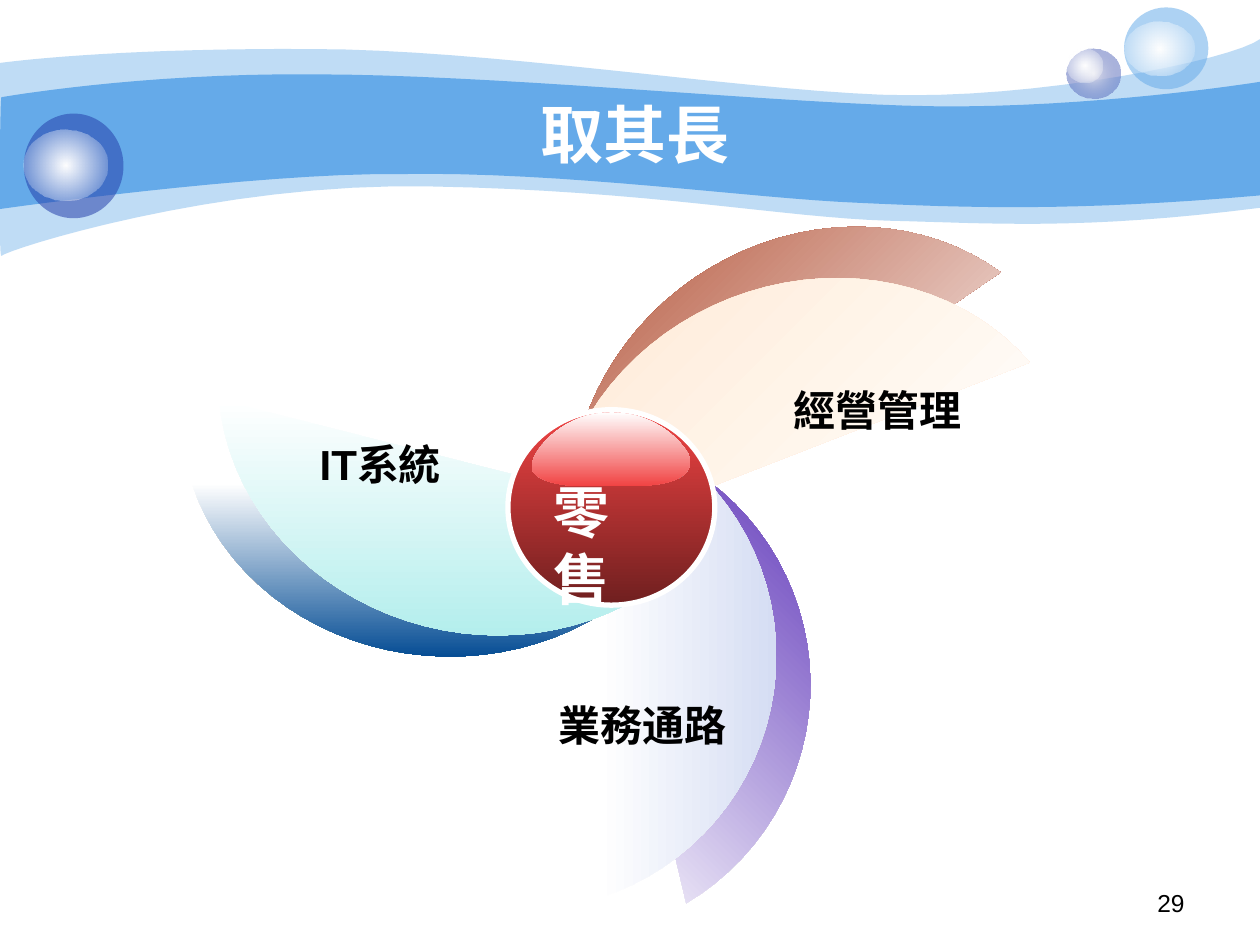
import math

import pptx
import pptx.dml.color
import pptx.enum.shapes
import pptx.enum.text
import pptx.oxml
import pptx.oxml.ns
import pptx.util

Cm = pptx.util.Cm
ALIGN = pptx.enum.text.PP_ALIGN
OVAL = pptx.enum.shapes.MSO_SHAPE.OVAL
CJK = "Noto Sans CJK SC"
COLORS = {
    "white": "FFFFFF", "black": "000000", "sky": "65AAE9", "navy": "233DA9",
    "mist": "E1E2ED", "brown": "A43010", "peach": "FFE6CD", "purple": "4516AE",
    "blue": "004992", "lavender": "D5DDF3", "aqua": "A2EAE8",
    "red": "F14343", "dark red": "6F1F1F",
}


def paint(shape, stops, angle=None):
    """Fill with (colour, opacity) stops: one is solid, no angle is radial."""
    colors = [
        f'<a:srgbClr val="{COLORS[name]}"><a:alpha val="{opacity * 1000}"/></a:srgbClr>'
        for name, opacity in stops
    ]
    namespace = pptx.oxml.ns.nsdecls("a")
    if len(colors) == 1:
        xml = f"<a:solidFill {namespace}>{colors[0]}</a:solidFill>"
    else:
        if angle is None:
            way = ('<a:path path="circle"><a:fillToRect l="50000" t="50000" '
                   'r="50000" b="50000"/></a:path>')
        else:
            way = f'<a:lin ang="{angle * 60000}" scaled="0"/>'
        xml = (f'<a:gradFill {namespace} rotWithShape="0"><a:gsLst>'
               f'<a:gs pos="0">{colors[0]}</a:gs><a:gs pos="100000">{colors[1]}</a:gs>'
               f"</a:gsLst>{way}</a:gradFill>")
    shape.shadow.inherit = False
    shape.line.fill.background()
    shape.fill.background()
    properties = shape._element.spPr
    empty_fill = properties.find(pptx.oxml.ns.qn("a:noFill"))
    properties.replace(empty_fill, pptx.oxml.parse_xml(xml))


def style(para, size, color, bold, align, latin=CJK):
    para.alignment = align
    para.font.size = pptx.util.Pt(size)
    para.font.bold = bold
    para.font.color.rgb = pptx.dml.color.RGBColor.from_string(COLORS[color])
    para.font.name = latin
    defaults = para._p.pPr.find(pptx.oxml.ns.qn("a:defRPr"))
    east_asian = pptx.oxml.parse_xml(
        f'<a:ea {pptx.oxml.ns.nsdecls("a")} typeface="{CJK}"/>')
    defaults.find(pptx.oxml.ns.qn("a:latin")).addnext(east_asian)


deck = pptx.Presentation()
deck.slide_width, deck.slide_height = Cm(25.4), Cm(19.05)
page = deck.slides.add_slide(deck.slide_layouts[5])
shapes = page.shapes

# Curved outlines in cm: a start point, then curves (6 numbers) or lines (2)
outer_wave = [
    (0, 1.27), (0.61, 1.19, 2.72, 0.97, 6.27, 0.99),
    (9.8, 0.99, 14.61, 1.78, 17.75, 1.91), (20.88, 2.03, 24.89, 1.19, 25.4, 0.79),
    (25.4, 4.19), (21.79, 4.65, 19.99, 4.5, 17.91, 4.45),
    (15.8, 4.39, 13.08, 3.84, 8.71, 3.76), (4.37, 3.66, 0.1, 5.05, 0.03, 5.16),
    (-0.03, 5.28, 0, 1.91, 0, 1.27),
]
inner_wave = [
    (0.03, 1.96), (0.05, 1.96, 2.79, 1.47, 6.3, 1.5),
    (9.8, 1.5, 15.11, 2.03, 18.24, 2.13), (21.36, 2.24, 24.79, 1.75, 25.4, 1.65),
    (25.4, 3.94), (21.67, 4.27, 19.43, 4.19, 17.32, 4.09),
    (15.21, 4.01, 11.35, 3.45, 8.05, 3.51), (5.16, 3.48, -0.05, 4.22, -0.03, 4.22),
    (0, 4.22, 0, 1.96, 0.03, 1.96),
]
gloss = [
    (13.87, 9.14), (14.05, 9.58, 13.61, 9.8, 12.7, 9.8), (11.76, 9.8),
    (11.15, 9.8, 10.67, 9.63, 10.72, 9.37), (10.77, 9.02, 11.4, 8.31, 12.32, 8.31),
    (12.95, 8.31, 13.56, 8.64, 13.87, 9.14),
]
curved = []
STEPS = 16
for outline, stops, angle in [
    (outer_wave, [("sky", 41)], None),
    (inner_wave, [("sky", 100)], None),
    (gloss, [("white", 100), ("red", 100)], 90),
]:
    points = [outline[0]]
    for segment in outline[1:]:
        if len(segment) == 2:
            points.append(segment)
            continue
        x0, y0 = points[-1]
        x1, y1, x2, y2, x3, y3 = segment
        for step in range(1, STEPS + 1):
            t = step / STEPS
            a, b, c, d = (1 - t) ** 3, 3 * t * (1 - t) ** 2, 3 * t * t * (1 - t), t ** 3
            points.append((a * x0 + b * x1 + c * x2 + d * x3,
                           a * y0 + b * y1 + c * y2 + d * y3))
    points = [(Cm(x), Cm(y)) for x, y in points]
    builder = shapes.build_freeform(*points[0])
    builder.add_line_segments(points[1:], close=True)
    curved.append(builder.convert_to_shape())
    paint(curved[-1], stops, angle)

# Glass bubbles, each with a highlight
glow = [("white", 100), ("white", 0)]
for box, stops in [
    ((21.51, 0.97, 1.07, 1.02), [("mist", 100), ("navy", 31)]),
    ((21.51, 0.97, 0.71, 0.69), glow),
    ((22.66, 0.15, 1.7, 1.65), [("sky", 53)]),
    ((22.66, 0.43, 1.42, 1.09), glow),
    ((0.48, 2.29, 2.01, 2.11), [("navy", 53)]),
    ((0.48, 2.62, 1.68, 1.42), glow),
]:
    paint(shapes.add_shape(OVAL, *map(Cm, box)), stops)

# Title, above the waves
title = shapes.title
shapes._spTree.append(title._element)
title.left, title.top, title.width, title.height = map(Cm, (2.54, 1.91, 20.52, 1.57))
title.text_frame.text = "取其長"
title.text_frame.vertical_anchor = pptx.enum.text.MSO_ANCHOR.MIDDLE
style(title.text_frame.paragraphs[0], 36, "white", True, ALIGN.CENTER)

# Propeller blades: one circular segment, stretched and turned
HALF_ANGLE = math.radians(72.4)
ARC_STEPS = 36
arc = []
for step in range(ARC_STEPS + 1):
    theta = HALF_ANGLE * (2 * step / ARC_STEPS - 1)
    arc.append(((math.cos(theta) - math.cos(HALF_ANGLE)) / (1 - math.cos(HALF_ANGLE)),
                0.5 + 0.5 * math.sin(theta) / math.sin(HALF_ANGLE)))
wide, narrow = (3.58, 9.78), (3.4, 10.31)
for left, top, (width, height), turn, first, last, angle in [
    (13.26, 1.85, narrow, 235.5, "brown", "white", 45),
    (13.64, 2.44, narrow, 248.7, "peach", "white", 45),
    (12.67, 8.15, wide, 346.8, "white", "purple", 315),
    (7.29, 6.38, narrow, 91, "white", "blue", 90),
    (12.07, 8.33, wide, 0, "white", "lavender", 0),
    (7.29, 5.82, narrow, 104.3, "white", "aqua", 90),
]:
    points = [(Cm(left + x * width), Cm(top + y * height)) for x, y in arc]
    builder = shapes.build_freeform(*points[0])
    builder.add_line_segments(points[1:], close=True)
    blade = builder.convert_to_shape()
    blade.rotation = turn
    paint(blade, [(first, 100), (last, 100)], angle)

# Hub with its gloss on top
hub = shapes.add_shape(OVAL, Cm(10.24), Cm(8.26), Cm(4.17), Cm(3.94))
paint(hub, [("red", 100), ("dark red", 100)], 90)
hub.line.color.rgb = pptx.dml.color.RGBColor.from_string(COLORS["white"])
hub.line.width = pptx.util.Pt(3)
shapes._spTree.append(curved[-1]._element)

# Labels and page number
for text, box, size, color, bold, align, latin in [
    ("零售", (10.9, 9.5, 2.62, 1.45), 32, "white", True, ALIGN.LEFT, CJK),
    ("IT系統", (6.17, 8.71, 2.97, 1.27), 24, "black", True, ALIGN.RIGHT, "Arial"),
    ("經營管理", (15.75, 7.62, 3.94, 1.27), 24, "black", True, ALIGN.LEFT, CJK),
    ("業務通路", (10.95, 13.97, 3.94, 1.27), 24, "black", True, ALIGN.RIGHT, CJK),
    ("29", (18.21, 17.78, 5.92, 0.89), 14, "black", False, ALIGN.RIGHT, "Arial"),
]:
    label = shapes.add_textbox(*map(Cm, box))
    label.text_frame.word_wrap = True
    label.text_frame.text = text
    style(label.text_frame.paragraphs[0], size, color, bold, align, latin)

deck.save("out.pptx")
